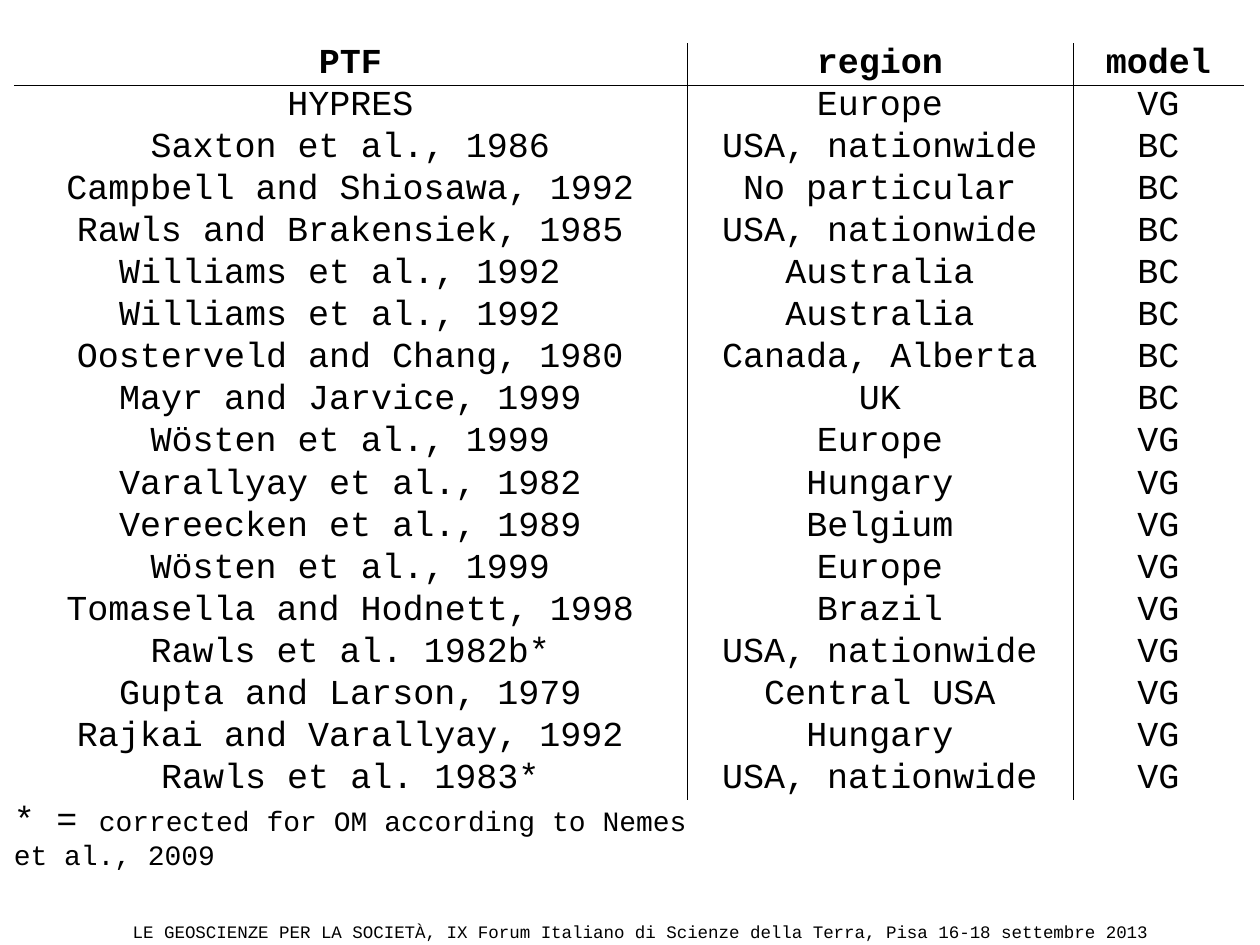
from pptx import Presentation
from pptx.dml.color import RGBColor
from pptx.enum.text import MSO_ANCHOR, PP_ALIGN
from pptx.oxml.ns import qn
from pptx.util import Emu, Pt
from lxml.etree import SubElement

HEADER = ("PTF", "region", "model")
FUNCTIONS = [
    ("HYPRES", "Europe", "VG"),
    ("Saxton et al., 1986", "USA, nationwide", "BC"),
    ("Campbell and Shiosawa, 1992", "No particular", "BC"),
    ("Rawls and Brakensiek, 1985", "USA, nationwide", "BC"),
    ("Williams et al., 1992 ", "Australia", "BC"),
    ("Williams et al., 1992 ", "Australia", "BC"),
    ("Oosterveld and Chang, 1980", "Canada, Alberta", "BC"),
    ("Mayr and Jarvice, 1999", "UK", "BC"),
    ("Wösten et al., 1999", "Europe", "VG"),
    ("Varallyay et al., 1982", "Hungary", "VG"),
    ("Vereecken et al., 1989", "Belgium", "VG"),
    ("Wösten et al., 1999", "Europe", "VG"),
    ("Tomasella and Hodnett, 1998", "Brazil", "VG"),
    ("Rawls et al. 1982b*", "USA, nationwide", "VG"),
    ("Gupta and Larson, 1979", "Central USA", "VG"),
    ("Rajkai and Varallyay, 1992", "Hungary", "VG"),
    ("Rawls et al. 1983*", "USA, nationwide", "VG"),
]
NOTE = [("* = ", 20), ("corrected for OM according to Nemes et al., 2009", 16)]
FOOTER = "LE GEOSCIENZE PER LA SOCIETÀ, IX Forum Italiano di Scienze della Terra, Pisa 16-18 settembre 2013"

FONT, BLACK, WHITE = "Courier New", "000000", "FFFFFF"
COLUMN_WIDTHS = (673, 386, 171)
ROW_HEIGHT, NOTE_HEIGHT = 42, 72


def px(value):
    return Emu(value * 914400 // 126)


def color(value):
    return RGBColor.from_string(value)


def style(paragraph, size, align=PP_ALIGN.CENTER, bold=False):
    paragraph.alignment = align
    font = paragraph.font
    font.name, font.size, font.bold = FONT, Pt(size), bold
    font.color.rgb = color(BLACK)


def set_borders(cell, visible):
    """Draw a thin black line on the visible sides and none on the others."""
    properties = cell._tc.get_or_add_tcPr()
    for side in "LRTB":
        line = SubElement(properties, qn(f"a:ln{side}"), w=str(Pt(0.5)))
        if side in visible:
            fill = SubElement(line, qn("a:solidFill"))
            SubElement(fill, qn("a:srgbClr"), val=BLACK)
        else:
            SubElement(line, qn("a:noFill"))


def visible_sides(row, column):
    if row > len(FUNCTIONS):
        return ""
    sides = ("R", "LR", "L")[column]
    return sides + {0: "B", 1: "T"}.get(row, "")


presentation = Presentation()
presentation.slide_width, presentation.slide_height = px(1260), px(945)
slide = presentation.slides.add_slide(presentation.slide_layouts[6])

# Footer
footer = slide.shapes.add_textbox(px(76), px(920), px(1128), px(24))
frame = footer.text_frame
frame.word_wrap = True
frame.margin_left = frame.margin_right = px(2)
frame.margin_top = frame.margin_bottom = px(1)
frame.text = FOOTER
style(frame.paragraphs[0], 10)

# Table grid
rows = [HEADER, *FUNCTIONS, ("", "", "")]
heights = [ROW_HEIGHT] * (len(rows) - 1) + [NOTE_HEIGHT]
table = slide.shapes.add_table(
    len(rows), len(HEADER), px(14), px(43), px(sum(COLUMN_WIDTHS)), px(sum(heights))
).table
table.horz_banding = table.first_row = False
for column, width in zip(table.columns, COLUMN_WIDTHS):
    column.width = px(width)
for row, height in zip(table.rows, heights):
    row.height = px(height)

# Table cells
for r, values in enumerate(rows):
    for c, value in enumerate(values):
        cell = table.cell(r, c)
        set_borders(cell, visible_sides(r, c))
        cell.fill.solid()
        cell.fill.fore_color.rgb = color(WHITE)
        cell.margin_left = cell.margin_right = cell.margin_top = cell.margin_bottom = 0
        cell.vertical_anchor = MSO_ANCHOR.MIDDLE
        cell.text = value
        style(cell.text_frame.paragraphs[0], 20, bold=r == 0)

# Note in the last row
note = table.cell(len(rows) - 1, 0).text_frame.paragraphs[0]
style(note, 20, PP_ALIGN.JUSTIFY)
for text, size in NOTE:
    run = note.add_run()
    run.text = text
    run.font.size = Pt(size)

presentation.save("out.pptx")
